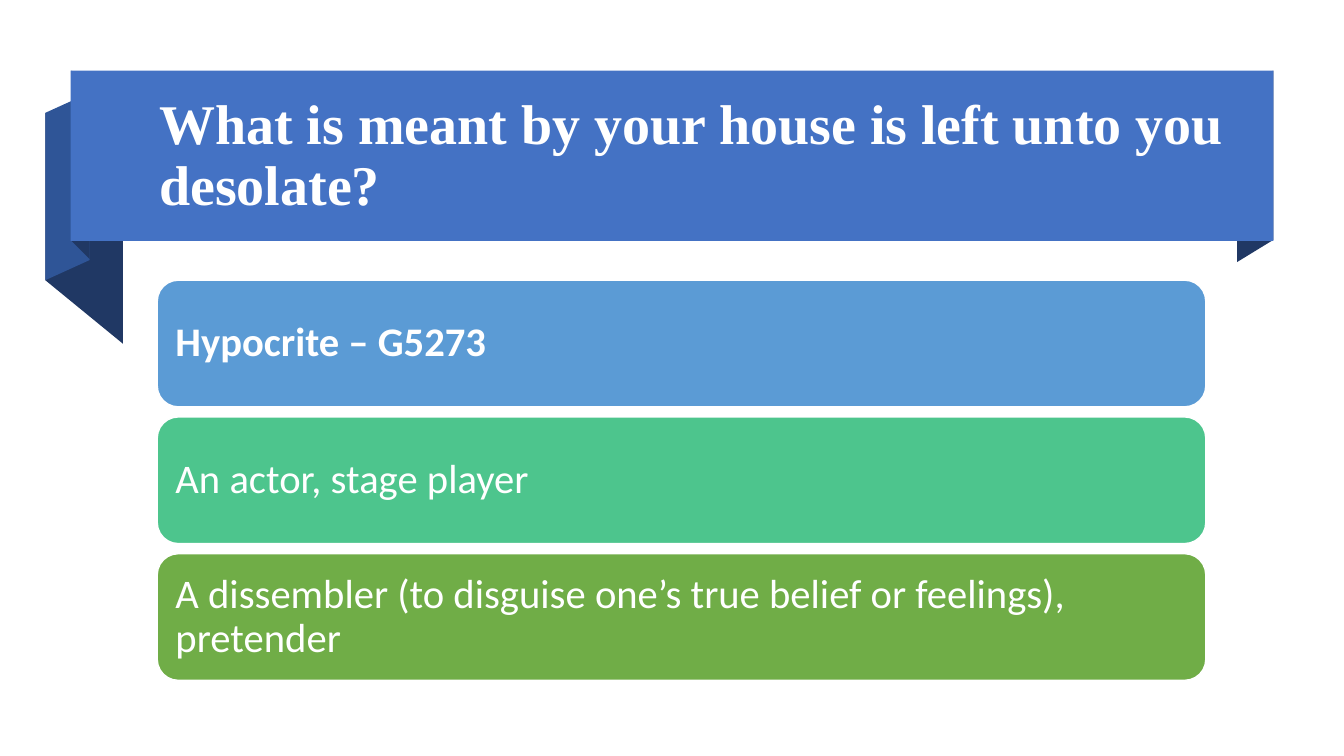
from pptx import Presentation
from pptx import util as u
from pptx.dml import color
from pptx.enum import shapes, text

COLORS = {
    "banner": "4472C4", "fold_dark": "203864", "fold_mid": "2F5597",
    "term": "5B9BD5", "actor": "4DC58D", "dissembler": "70AD47",
    "white": "FFFFFF",
}
MEANINGS = [
    ("Hypocrite – G5273", "term", True),
    ("An actor, stage player", "actor", False),
    ("A dissembler (to disguise one’s true belief or feelings), pretender",
     "dissembler", False),
]


def rgb(name):
    return color.RGBColor.from_string(COLORS[name])


def paint(part, fill):
    part.shadow.inherit = False
    part.fill.solid()
    part.fill.fore_color.rgb = rgb(fill)
    part.line.fill.background()


def write(part, words, font, size, bold, inset_x, inset_y):
    frame = part.text_frame
    frame.word_wrap = True
    frame.vertical_anchor = text.MSO_ANCHOR.MIDDLE
    frame.margin_left = frame.margin_right = u.Inches(inset_x)
    frame.margin_top = frame.margin_bottom = u.Inches(inset_y)
    paragraph = frame.paragraphs[0]
    paragraph.alignment = text.PP_ALIGN.LEFT
    paragraph.line_spacing = 0.9
    run = paragraph.add_run()
    run.text = words
    run.font.name = font
    run.font.size = u.Pt(size)
    run.font.bold = bold
    run.font.color.rgb = rgb("white")


def add_fold(slide, points, fill):
    corners = [(u.Inches(x), u.Inches(y)) for x, y in points]
    outline = slide.shapes.build_freeform(*corners[0])
    outline.add_line_segments(corners[1:], close=True)
    paint(outline.convert_to_shape(), fill)


def add_banner(slide, left, top, width, height):
    right, bottom = left + width, top + height
    tail, crease = left - 0.25, left + 0.19
    # Ribbon folds behind the banner, back to front
    add_fold(slide, [(right, bottom - 0.01), (right - 0.36, bottom + 0.21),
                     (right - 0.36, top + 0.21), (right, top)], "fold_dark")
    add_fold(slide, [(left + 0.52, top + 2.71), (tail, top + 2.08),
                     (tail, top + 0.42), (left + 0.52, top + 1.05)], "fold_dark")
    add_fold(slide, [(crease, top + 1.88), (tail, top + 2.08),
                     (tail, top + 0.42), (crease, top + 0.22)], "fold_mid")
    add_fold(slide, [(crease, top + 1.87), (left + 0.01, bottom),
                     (left + 0.01, top), (crease, top + 0.19)], "fold_dark")
    # Banner face and title
    face = slide.shapes.add_shape(
        shapes.MSO_SHAPE.RECTANGLE, *map(u.Inches, (left, top, width, height)))
    paint(face, "banner")
    title = slide.shapes.add_textbox(
        *map(u.Inches, (left + 0.78, top + 0.13, width - 0.99, height - 0.24)))
    write(title, "What is meant by your house is left unto you desolate?",
          "Times New Roman", 40, True, 0.1, 0.05)


def add_meanings(slide, left, top, width, height, gap=0.1):
    card_height = (height - gap * (len(MEANINGS) - 1)) / len(MEANINGS)
    for row, (words, fill, bold) in enumerate(MEANINGS):
        card_top = top + row * (card_height + gap)
        card = slide.shapes.add_shape(
            shapes.MSO_SHAPE.ROUNDED_RECTANGLE,
            *map(u.Inches, (left, card_top, width, card_height)))
        paint(card, fill)
        card.line.color.rgb = rgb("white")
        card.line.width = u.Pt(1)
        write(card, words, "Calibri", 29, bold, 0.12, 0.12)


def main():
    deck = Presentation()
    deck.slide_width, deck.slide_height = u.Inches(13.33), u.Inches(7.5)
    slide = deck.slides.add_slide(deck.slide_layouts[6])
    add_banner(slide, 0.7, 0.7, 11.93, 1.69)
    add_meanings(slide, 1.56, 2.78, 10.4, 3.97)
    deck.save("out.pptx")


if __name__ == "__main__":
    main()
